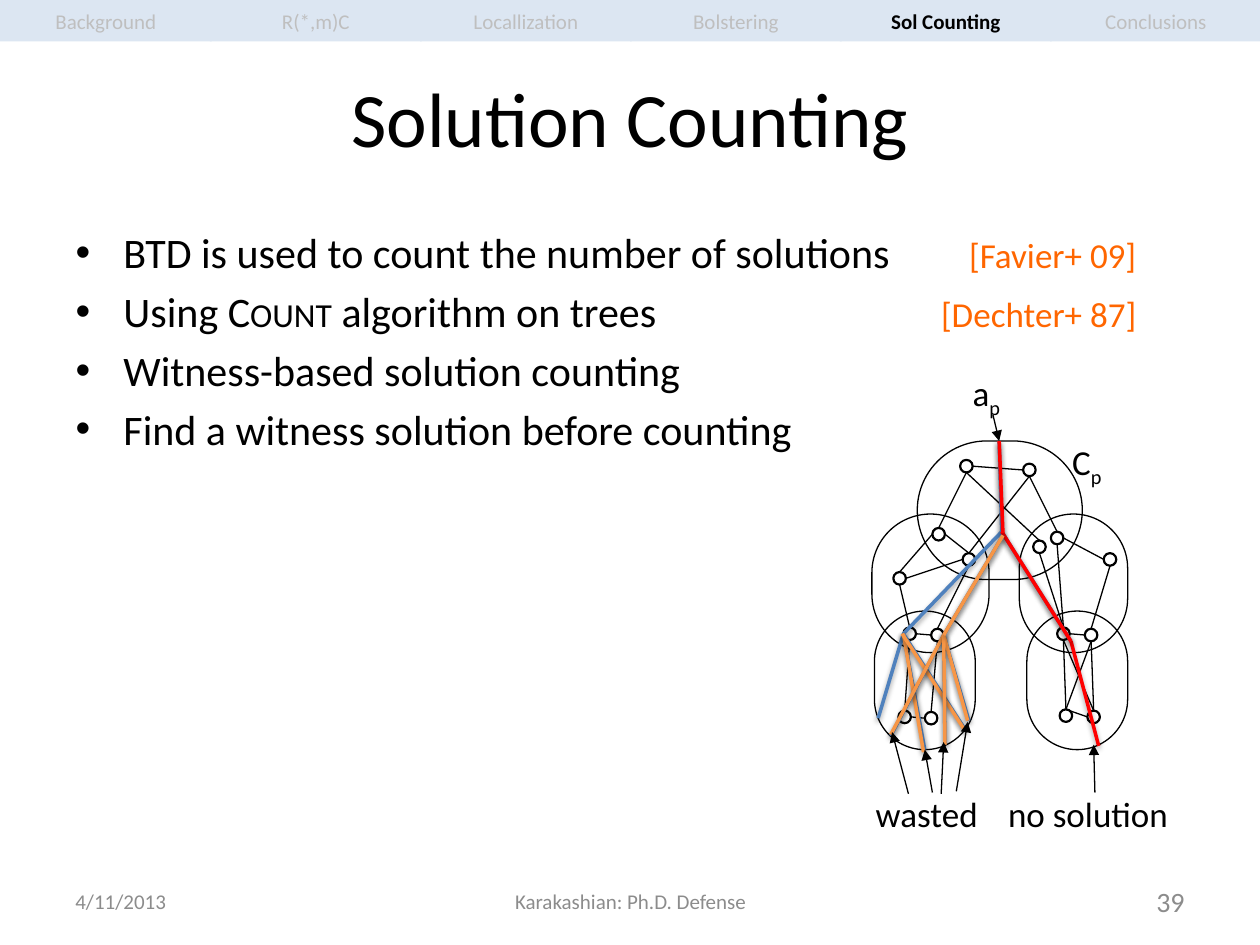
from lxml.etree import SubElement
from pptx import Presentation
from pptx.dml.color import RGBColor
from pptx.enum.shapes import MSO_CONNECTOR, MSO_SHAPE
from pptx.enum.text import MSO_ANCHOR, MSO_AUTO_SIZE, PP_ALIGN
from pptx.oxml import parse_xml
from pptx.oxml.ns import nsdecls, qn
from pptx.util import Inches, Pt

FONT = "Calibri"
BLACK = RGBColor(0x00, 0x00, 0x00)
GRAY = RGBColor(0x8C, 0x8C, 0x8C)
SILVER = RGBColor(0xBF, 0xBF, 0xBF)
PALE_BLUE = RGBColor(0xDC, 0xE6, 0xF2)
CITATION = RGBColor(0xFF, 0x66, 0x00)
BLUE = RGBColor(0x4F, 0x81, 0xBD)
ORANGE = RGBColor(0xF7, 0x96, 0x46)
RED = RGBColor(0xFF, 0x00, 0x00)

SECTIONS = ["Background", "R(*,m)C", "Locallization", "Bolstering", "Sol Counting", "Conclusions"]
CURRENT_SECTION = "Sol Counting"
TITLE = "Solution Counting"
BULLETS = [
    [("BTD is used to count the number of solutions\t", "plain"), ("[Favier+ 09]", "citation")],
    [("Using ", "plain"), ("Count", "small caps"), (" algorithm on trees \t", "plain"),
     ("[Dechter+ 87]", "citation")],
    [("Witness-based solution counting", "plain")],
    [("Find a witness solution before counting", "plain")],
]
FOOTERS = [
    ("4/11/2013", 0.5, 2.33, 12, PP_ALIGN.LEFT),
    ("Karakashian: Ph.D. Defense", 3.42, 3.17, 12, PP_ALIGN.CENTER),
    ("39", 7.17, 2.33, 16, PP_ALIGN.RIGHT),
]

CLUSTERS = [
    (7.28, 3.5, 1.31), (6.92, 4.08, 0.93), (8.09, 4.08, 0.86), (6.94, 4.85, 0.8), (8.15, 4.85, 0.8),
]
CLUSTER_HEIGHT = 1.1
NODE_SIZE = 0.1
NODES = {
    "A": (7.62, 3.65), "B": (8.12, 3.68), "C": (7.4, 4.19), "D": (7.64, 4.39),
    "E": (7.09, 4.54), "F": (8.2, 4.29), "G": (8.34, 4.22), "H": (8.76, 4.39),
    "I": (7.17, 4.98), "J": (7.39, 4.99), "K": (8.39, 4.98), "L": (8.61, 4.99),
    "M": (7.13, 5.64), "N": (7.34, 5.65), "O": (8.41, 5.63), "P": (8.63, 5.64),
}
TOP, LEFT, BOTTOM, RIGHT = range(4)
EDGES = [
    ("A", RIGHT, "B", LEFT), ("A", BOTTOM, "C", TOP), ("D", TOP, "B", BOTTOM),
    ("A", BOTTOM, "F", TOP), ("B", BOTTOM, "G", TOP), ("G", RIGHT, "H", LEFT),
    ("F", BOTTOM, "K", TOP), ("G", BOTTOM, "K", TOP), ("H", BOTTOM, "L", TOP),
    ("K", RIGHT, "L", LEFT), ("C", LEFT, "E", TOP), ("E", BOTTOM, "I", TOP),
    ("I", RIGHT, "J", LEFT), ("D", BOTTOM, "J", TOP), ("E", RIGHT, "D", LEFT),
    ("C", RIGHT, "D", TOP), ("I", BOTTOM, "M", TOP), ("N", LEFT, "M", RIGHT),
    ("J", BOTTOM, "N", TOP), ("L", BOTTOM, "O", TOP), ("K", BOTTOM, "O", TOP),
    ("O", TOP, "P", LEFT), ("P", TOP, "K", BOTTOM), ("P", TOP, "L", BOTTOM),
]

ROOT, FORK, INNER_FORK = (7.93, 3.5), (7.95, 4.22), (7.96, 4.25)
OUTER, INNER, SOLVED = (7.17, 5.03), (7.49, 5.04), (8.5, 5.09)
OUTER_SEARCH = [
    (BLUE, [(ROOT, FORK), (FORK, SOLVED), (FORK, OUTER), (OUTER, (7.34, 5.95)),
            (OUTER, (6.97, 5.7)), (OUTER, (7.66, 5.79))]),
    (ORANGE, [(OUTER, (7.33, 5.97)), ((7.16, 5.03), (7.66, 5.8))]),
    (RED, [(SOLVED, (8.72, 5.92)), (FORK, SOLVED), (ROOT, (7.96, 4.23))]),
]
INNER_SEARCH = [
    (BLUE, [(INNER_FORK, INNER), (INNER, (7.07, 5.84)), (INNER, (7.5, 5.9)), (INNER, (7.69, 5.72))]),
    (ORANGE, [(INNER, (7.07, 5.83)), (INNER, (7.68, 5.72)), (INNER, (7.5, 5.91)),
              (INNER_FORK, INNER)]),
]
LABELS = [
    ("C", "p", 8.51, 3.5, 0.33), ("a", "p", 7.72, 2.95, 0.33),
    ("wasted", "", 6.95, 6.29, 0.91), ("no solution", "", 8, 6.29, 1.38),
]
ARROWS = [
    ((7.88, 3.29), (7.93, 3.5)), ((7.4, 6.29), (7.34, 5.95)), ((7.47, 6.3), (7.49, 5.89)),
    ((8.69, 6.29), (8.68, 5.91)), ((7.21, 6.3), (7.08, 5.81)), ((7.59, 6.28), (7.68, 5.73)),
]


def format_run(run, size, color=BLACK, bold=False):
    run.font.name = FONT
    run.font.size = Pt(size)
    run.font.color.rgb = color
    run.font.bold = bold


def clear_insets(text_frame):
    text_frame.margin_left = text_frame.margin_right = 0
    text_frame.margin_top = text_frame.margin_bottom = 0


def place(shape, left, top, width, height):
    shape.left, shape.top = Inches(left), Inches(top)
    shape.width, shape.height = Inches(width), Inches(height)


def add_rounded(shapes, left, top, width, height, line_width):
    shape = shapes.add_shape(MSO_SHAPE.ROUNDED_RECTANGLE, Inches(left), Inches(top),
                             Inches(width), Inches(height))
    shape.adjustments[0] = 0.5
    shape.shadow.inherit = False
    shape.fill.background()
    shape.line.color.rgb = BLACK
    shape.line.width = Pt(line_width)
    return shape


def add_line(shapes, start, end, color=BLACK, width=0.75, shadow=False, arrow=False):
    line = shapes.add_connector(MSO_CONNECTOR.STRAIGHT, *map(Inches, start + end))
    line.line.color.rgb = color
    line.line.width = Pt(width)
    if arrow:
        SubElement(line.line._get_or_add_ln(), qn("a:tailEnd"), type="triangle")
    effects = SubElement(line._element.spPr, qn("a:effectLst"))
    if shadow:
        effects.append(parse_xml(
            f'<a:outerShdw {nsdecls("a")} blurRad="40000" dist="20000" dir="5400000" rotWithShape="0">'
            '<a:srgbClr val="000000"><a:alpha val="38000"/></a:srgbClr></a:outerShdw>'))
    return line


def add_search(shapes, search):
    for color, branches in search:
        for start, end in branches:
            add_line(shapes, start, end, color, 2, shadow=True)


def fill_body(body):
    place(body, 0.5, 1.75, 9, 4.95)
    for index, pieces in enumerate(BULLETS):
        frame = body.text_frame
        paragraph = frame.paragraphs[0] if index == 0 else frame.add_paragraph()
        properties = paragraph._p.get_or_add_pPr()
        properties.set("marL", str(Inches(0.38)))
        properties.set("indent", str(-Inches(0.38)))
        SubElement(properties, qn("a:buChar"), char="•")
        if len(pieces) > 1:
            tabs = SubElement(properties, qn("a:tabLst"))
            SubElement(tabs, qn("a:tab"), pos=str(Inches(8.75)), algn="r")
        for text, style in pieces:
            run = paragraph.add_run()
            run.text = text
            cited = style == "citation"
            format_run(run, 20 if cited else 24, CITATION if cited else BLACK)
            if style == "small caps":
                run.font._element.set("cap", "small")


def add_graph(shapes):
    group = shapes.add_group_shape().shapes
    for left, top, width in CLUSTERS:
        add_rounded(group, left, top, width, CLUSTER_HEIGHT, 0.75)
    nodes = {name: add_rounded(group, *corner, NODE_SIZE, NODE_SIZE, 1.25)
             for name, corner in NODES.items()}
    for source, source_side, target, target_side in EDGES:
        edge = add_line(group, NODES[source], NODES[target])
        edge.begin_connect(nodes[source], source_side)
        edge.end_connect(nodes[target], target_side)


def add_label(shapes, text, subscript, left, top, width):
    box = shapes.add_textbox(Inches(left), Inches(top), Inches(width), Inches(0.34))
    frame = box.text_frame
    clear_insets(frame)
    frame.auto_size = MSO_AUTO_SIZE.SHAPE_TO_FIT_TEXT
    frame.word_wrap = False
    frame.text = text
    format_run(frame.paragraphs[0].runs[0], 20)
    if subscript:
        run = frame.paragraphs[0].add_run()
        run.text = subscript
        format_run(run, 20)
        run.font._element.set("baseline", "-25000")


def add_footer(shapes, text, left, width, size, alignment):
    box = shapes.add_textbox(Inches(left), Inches(6.95), Inches(width), Inches(0.4))
    frame = box.text_frame
    frame.word_wrap = True
    frame.vertical_anchor = MSO_ANCHOR.MIDDLE
    frame.text = text
    frame.paragraphs[0].alignment = alignment
    format_run(frame.paragraphs[0].runs[0], size, GRAY)


def add_section(shapes, index, name):
    tab = shapes.add_shape(MSO_SHAPE.RECTANGLE, Inches(index * 10 / len(SECTIONS)), 0,
                           Inches(1.68), Inches(0.33))
    tab.shadow.inherit = False
    tab.fill.solid()
    tab.fill.fore_color.rgb = PALE_BLUE
    tab.line.fill.background()
    frame = tab.text_frame
    clear_insets(frame)
    frame.vertical_anchor = MSO_ANCHOR.MIDDLE
    frame.text = name
    frame.paragraphs[0].alignment = PP_ALIGN.CENTER
    current = name == CURRENT_SECTION
    format_run(frame.paragraphs[0].runs[0], 12, BLACK if current else SILVER, current)


def main():
    presentation = Presentation()
    presentation.slide_width, presentation.slide_height = Inches(10), Inches(7.5)
    slide = presentation.slides.add_slide(presentation.slide_layouts[1])
    shapes = slide.shapes
    place(shapes.title, 0.5, 0.3, 9, 1.25)
    shapes.title.text_frame.text = TITLE
    format_run(shapes.title.text_frame.paragraphs[0].runs[0], 44)
    fill_body(slide.placeholders[1])
    for footer in FOOTERS:
        add_footer(shapes, *footer)
    add_graph(shapes)
    add_search(shapes, OUTER_SEARCH)
    for label in LABELS:
        add_label(shapes, *label)
    add_search(shapes, INNER_SEARCH)
    for start, end in ARROWS:
        add_line(shapes, start, end, arrow=True)
    for index, name in enumerate(SECTIONS):
        add_section(shapes, index, name)
    presentation.save("out.pptx")


if __name__ == "__main__":
    main()
